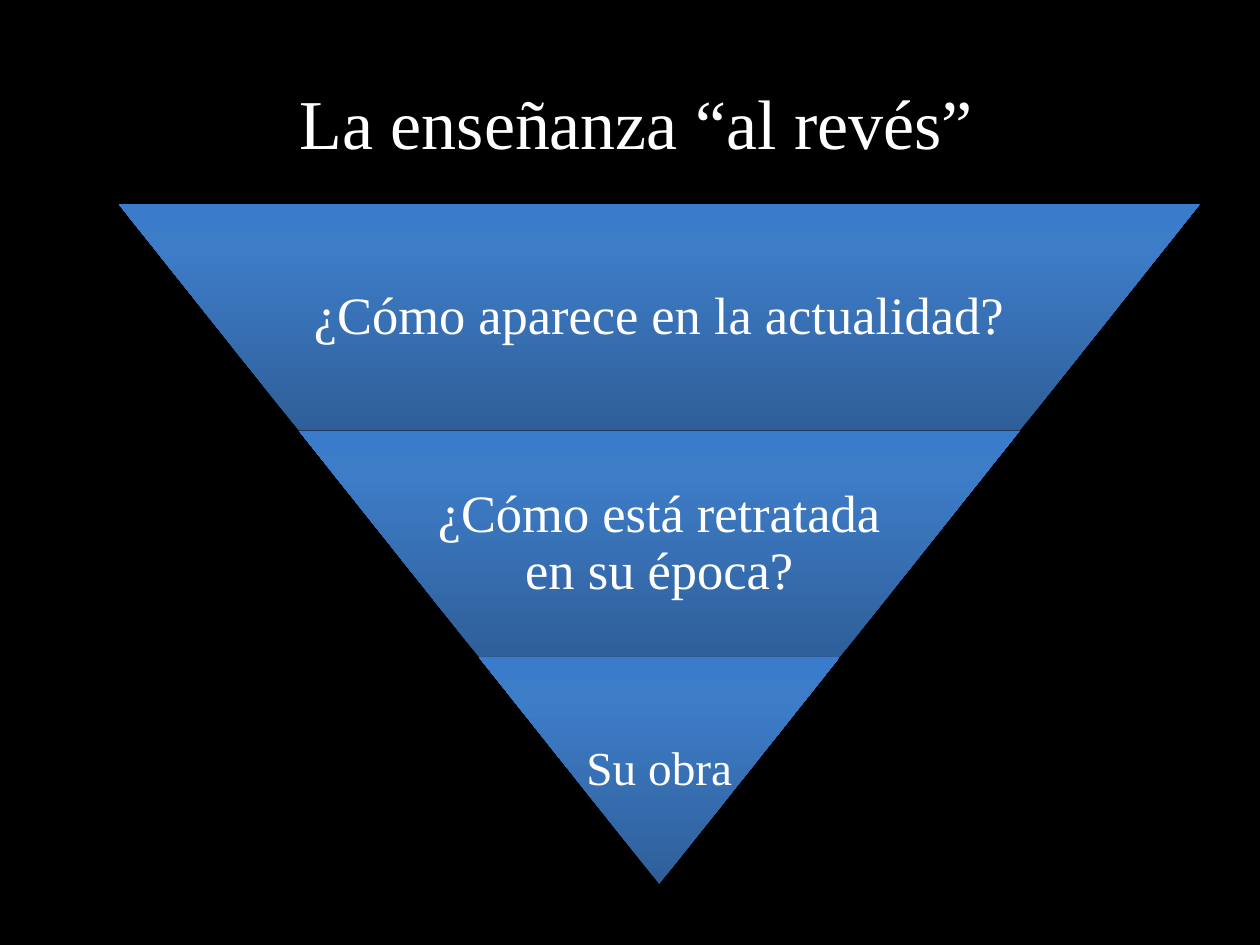
from copy import deepcopy
from dataclasses import dataclass

from lxml import etree
from pptx import Presentation
from pptx.dml.color import RGBColor
from pptx.enum.shapes import MSO_SHAPE
from pptx.enum.text import MSO_ANCHOR as Anchor, MSO_AUTO_SIZE as AutoSize, PP_ALIGN as Align
from pptx.oxml.ns import qn
from pptx.util import Cm, Pt


@dataclass(frozen=True)
class Theme:
    font: str = "Times New Roman"
    background: RGBColor = RGBColor.from_string("000000")
    text: RGBColor = RGBColor.from_string("FFFFFF")
    shadow: str = "000000"
    gradient: tuple = ((0, "2F5F99"), (0.8, "3D7CC7"), (1, "3A7CCB"))
    title_size: int = 40
    band_size: int = 30
    tip_size: int = 27


theme = Theme()


def add_text(shapes, text, left, top, width, height, *, size, align=Align.LEFT,
             anchor=Anchor.TOP, wrap=True, margin=None, line_spacing=None):
    box = shapes.add_textbox(Cm(left), Cm(top), Cm(width), Cm(height))
    frame = box.text_frame
    frame.word_wrap = wrap
    frame.auto_size = AutoSize.NONE if wrap else AutoSize.SHAPE_TO_FIT_TEXT
    frame.vertical_anchor = anchor
    if margin is not None:
        frame.margin_left = frame.margin_right = Cm(margin)
        frame.margin_top = frame.margin_bottom = Cm(margin)
    paragraph = frame.paragraphs[0]
    paragraph.alignment = align
    paragraph.line_spacing = line_spacing
    run = paragraph.add_run()
    run.text = text
    run.font.name = theme.font
    run.font.size = Pt(size)
    run.font.color.rgb = theme.text


def style_band(shape):
    """Give a band its three-stop gradient, upright on the slide, and a soft shadow."""
    shape.line.fill.background()
    shape.fill.gradient()
    shape.fill.gradient_angle = 90
    properties = shape._element.spPr
    gradient = properties.find(qn("a:gradFill"))
    gradient.set("rotWithShape", "0")
    stop_list = gradient.find(qn("a:gsLst"))
    stop_list.append(deepcopy(stop_list[0]))
    for stop, (position, color) in zip(shape.fill.gradient_stops, theme.gradient):
        stop.position = position
        stop.color.rgb = RGBColor.from_string(color)

    shape.shadow.inherit = False
    effects = properties.find(qn("a:effectLst"))
    shadow = etree.SubElement(effects, qn("a:outerShdw"), blurRad=str(Pt(3.1)),
                              dist=str(Pt(1.8)), dir="5400000", rotWithShape="0")
    color = etree.SubElement(shadow, qn("a:srgbClr"), val=theme.shadow)
    etree.SubElement(color, qn("a:alpha"), val="35000")


presentation = Presentation()
presentation.slide_width = Cm(25.4)
presentation.slide_height = Cm(19.05)
slide = presentation.slides.add_slide(presentation.slide_layouts[6])
slide.background.fill.solid()
slide.background.fill.fore_color.rgb = theme.background

# Inverted pyramid: text, share of the band's width for the text, type size
bands = [
    ("¿Cómo aparece en la actualidad?", 0.65, theme.band_size),
    ("¿Cómo está retratada en su época?", 0.65, theme.band_size),
    ("Su obra", 1, theme.tip_size),
]
center, pyramid_top = 13.29, 4.11
pyramid_width, band_height = 21.8, 4.57
inset = pyramid_width / len(bands) / 2

pyramid = slide.shapes.add_group_shape()
for index, (text, text_share, size) in enumerate(bands):
    top = pyramid_top + index * band_height
    width = pyramid_width - 2 * index * inset
    band = pyramid.shapes.add_shape(MSO_SHAPE.TRAPEZOID, Cm(center - width / 2), Cm(top),
                                    Cm(width), Cm(band_height))
    band.rotation = 180
    band.adjustments[0] = inset / band_height
    style_band(band)
    text_width = width * text_share
    add_text(pyramid.shapes, text, center - text_width / 2, top, text_width, band_height,
             size=size, align=Align.CENTER, anchor=Anchor.MIDDLE, margin=0.1,
             line_spacing=0.9)

add_text(slide.shapes, "La enseñanza “al revés”", 5.79, 1.47, 14.22, 1.96,
         size=theme.title_size, wrap=False)

presentation.save("out.pptx")
